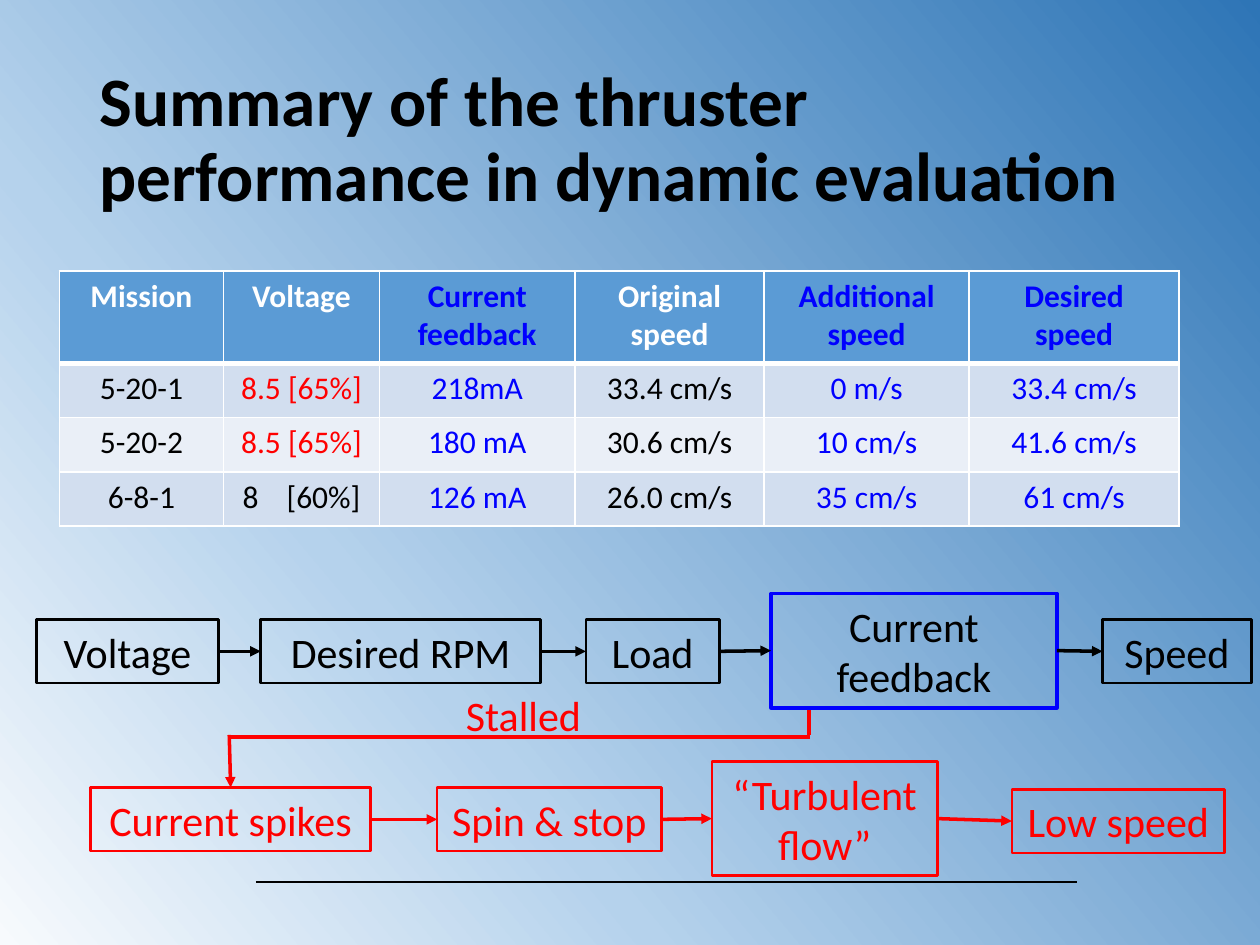
from lxml.etree import SubElement
from pptx import Presentation
from pptx.dml.color import RGBColor
from pptx.enum.shapes import MSO_CONNECTOR, MSO_SHAPE
from pptx.enum.text import MSO_ANCHOR, PP_ALIGN
from pptx.oxml.ns import qn
from pptx.util import Pt

BLACK = RGBColor(0x00, 0x00, 0x00)
WHITE = RGBColor(0xFF, 0xFF, 0xFF)
RED = RGBColor(0xFF, 0x00, 0x00)
BLUE = RGBColor(0x00, 0x00, 0xFF)
HEADER = RGBColor(0x5B, 0x9B, 0xD5)
BANDS = [RGBColor(0xD2, 0xDE, 0xEF), RGBColor(0xEA, 0xEF, 0xF7)]
GRADIENT = [(0, "F7FAFD"), (32, "B5D2EC"), (100, "2E75B6")]


def write(tf, text, size, color, bold=False, align=PP_ALIGN.CENTER):
    tf.word_wrap = True
    p = tf.paragraphs[0]
    p.alignment = align
    r = p.add_run()
    r.text = text
    r.font.color.rgb = color
    for name, value in {"name": "Calibri", "size": Pt(size), "bold": bold}.items():
        setattr(r.font, name, value)
    return p


def add_line(x1, y1, x2, y2, color, width=2, arrow=False):
    sp = s.shapes.add_connector(MSO_CONNECTOR.STRAIGHT, Pt(x1), Pt(y1), Pt(x2), Pt(y2))
    sp.line.color.rgb = color
    sp.line.width = Pt(width)
    if arrow:
        SubElement(sp.line._get_or_add_ln(), qn("a:tailEnd"), type="triangle")
    SubElement(sp._element.spPr, qn("a:effectLst"))
    return sp


prs = Presentation()
prs.slide_width, prs.slide_height = Pt(720), Pt(540)
s = prs.slides.add_slide(prs.slide_layouts[6])

# Background gradient, rising to the right
fill = s.background.fill
fill.gradient()
fill.gradient_angle = 40
stops = s._element.find(".//" + qn("a:gsLst"))
for stop in list(stops):
    stops.remove(stop)
for pos, color in GRADIENT:
    stop = SubElement(stops, qn("a:gs"), pos=str(pos * 1000))
    SubElement(stop, qn("a:srgbClr"), val=color)

# Footer rule
add_line(146.2, 504, 615.6, 504, BLACK, width=1)

# Title
tf = s.shapes.add_textbox(Pt(49.7), Pt(28.8), Pt(620.6), Pt(104.4)).text_frame
tf.vertical_anchor = MSO_ANCHOR.MIDDLE
p = write(tf, "Summary of the thruster performance in dynamic evaluation", 39.6, BLACK,
          bold=True, align=PP_ALIGN.LEFT)
p.line_spacing = 0.9

# Results table
rows = [
    ["Mission", "Voltage", "Current feedback", "Original speed", "Additional speed", "Desired speed"],
    ["5-20-1", "8.5 [65%]", "218mA", "33.4 cm/s", "0 m/s", "33.4 cm/s"],
    ["5-20-2", "8.5 [65%]", "180 mA", "30.6 cm/s", "10 cm/s", "41.6 cm/s"],
    ["6-8-1", "8\t[60%]", "126 mA", "26.0 cm/s", "35 cm/s", "61 cm/s"],
]
col_widths = [93.9, 89, 111.9, 108, 117.2, 119.9]
row_heights = [53, 30.9, 30.9, 30.9]
blue_columns = {2, 4, 5}
table = s.shapes.add_table(len(rows), len(col_widths), Pt(33.9), Pt(154.8),
                           Pt(sum(col_widths)), Pt(sum(row_heights))).table
for column, width in zip(table.columns, col_widths):
    column.width = Pt(width)
for row, height in zip(table.rows, row_heights):
    row.height = Pt(height)
for i, values in enumerate(rows):
    for j, text in enumerate(values):
        cell = table.cell(i, j)
        color = WHITE if i == 0 else BLACK
        if j in blue_columns:
            color = BLUE
        elif text.startswith("8.5"):
            color = RED
        p = write(cell.text_frame, text, 18, color, bold=i == 0)
        if "\t" in text:
            p.alignment = PP_ALIGN.LEFT
            cell.margin_left = Pt(10.8)
            tabs = SubElement(p._p.get_or_add_pPr(), qn("a:tabLst"))
            SubElement(tabs, qn("a:tab"), pos=str(Pt(25.2)), algn="l")
        # Borders come before the fill in the cell properties
        for side in "LRTB":
            heavy = (i, side) in {(0, "B"), (1, "T")}
            ln = SubElement(cell._tc.get_or_add_tcPr(), qn("a:ln" + side),
                            w=str(Pt(3 if heavy else 1)))
            SubElement(SubElement(ln, qn("a:solidFill")), qn("a:srgbClr"), val=str(WHITE))
        cell.fill.solid()
        cell.fill.fore_color.rgb = HEADER if i == 0 else BANDS[(i - 1) % 2]

# Flow rows: text, left, middle, width, height, outline, outline width
flows = [
    (BLACK, [
        ("Voltage", 20.9, 372.2, 104, 36.3, BLACK, 1.5),
        ("Desired RPM", 149, 372.2, 160, 36.3, BLACK, 1.5),
        ("Load", 334.8, 372.2, 76.3, 36.3, BLACK, 1.5),
        ("Current feedback", 440.6, 371.8, 163.3, 65.4, BLUE, 2),
        ("Speed", 630, 372.2, 85, 36.3, BLACK, 1.5),
    ]),
    (RED, [
        ("Current spikes", 51.8, 468.2, 160, 36.3, RED, 1.5),
        ("Spin & stop", 249.8, 468.2, 128.2, 36.3, RED, 1.5),
        ("“Turbulent flow”", 406.8, 467.8, 128.9, 65.4, RED, 1.5),
        ("Low speed", 578.2, 469.2, 121.7, 36.3, RED, 1.5),
    ]),
]
for color, boxes in flows:
    previous = None
    for text, left, middle, width, height, outline, weight in boxes:
        sp = s.shapes.add_shape(MSO_SHAPE.RECTANGLE, Pt(left), Pt(middle - height / 2),
                                Pt(width), Pt(height))
        sp.shadow.inherit = False
        sp.fill.background()
        sp.line.color.rgb = outline
        sp.line.width = Pt(weight)
        write(sp.text_frame, text, 24, color)
        if previous is not None:
            link = add_line(0, 0, 0, 0, color, arrow=True)
            link.begin_connect(previous, 3)
            link.end_connect(sp, 1)
        previous = sp

# Stalled branch from the feedback box down to the red row
add_line(462.2, 406, 462.2, 420, RED)
add_line(463, 421.2, 130.3, 421.2, RED)
add_line(131, 420, 131.8, 450, RED, arrow=True)
tf = s.shapes.add_textbox(Pt(252), Pt(390.2), Pt(94.3), Pt(36.3)).text_frame
write(tf, "Stalled", 24, RED)

prs.save("out.pptx")
